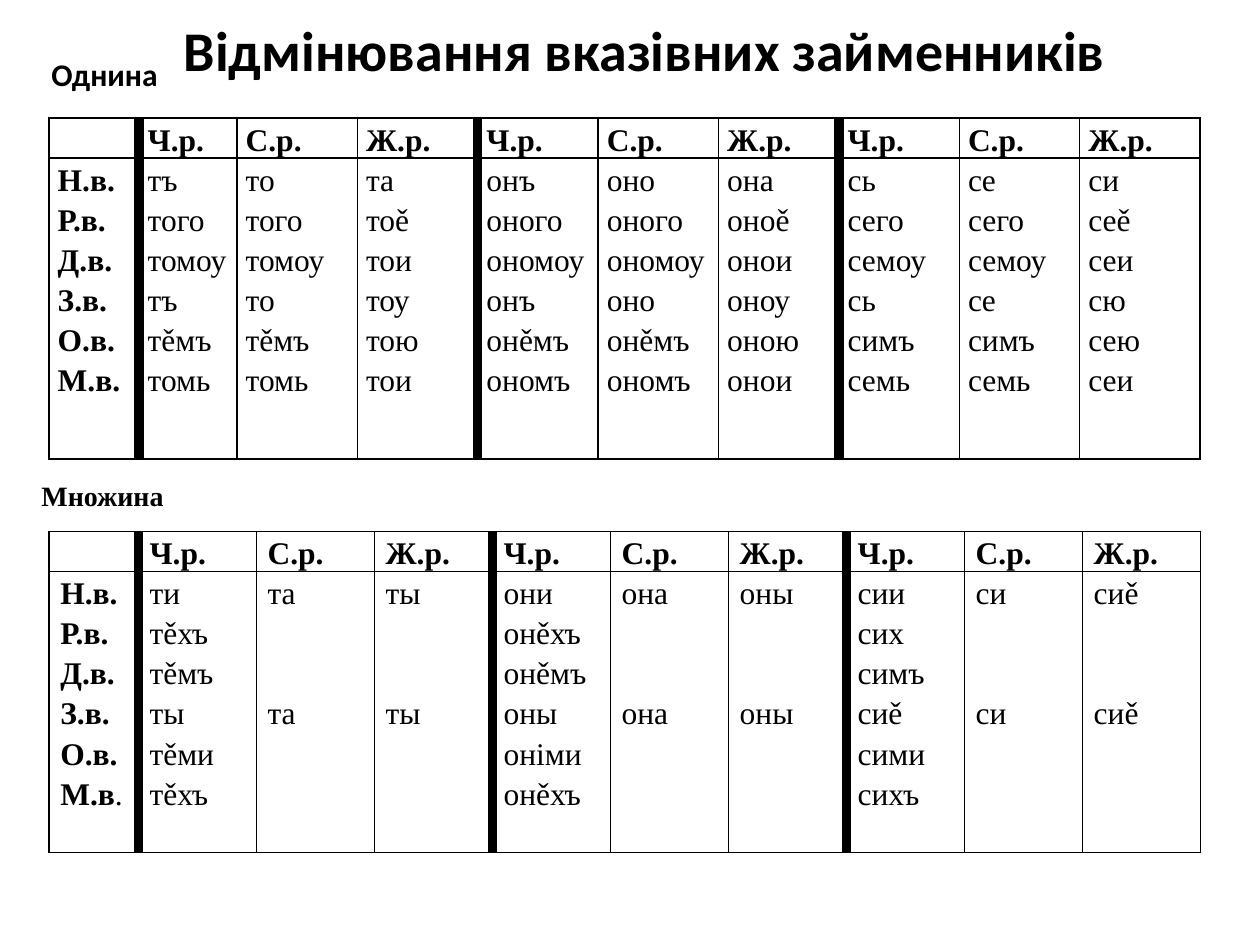
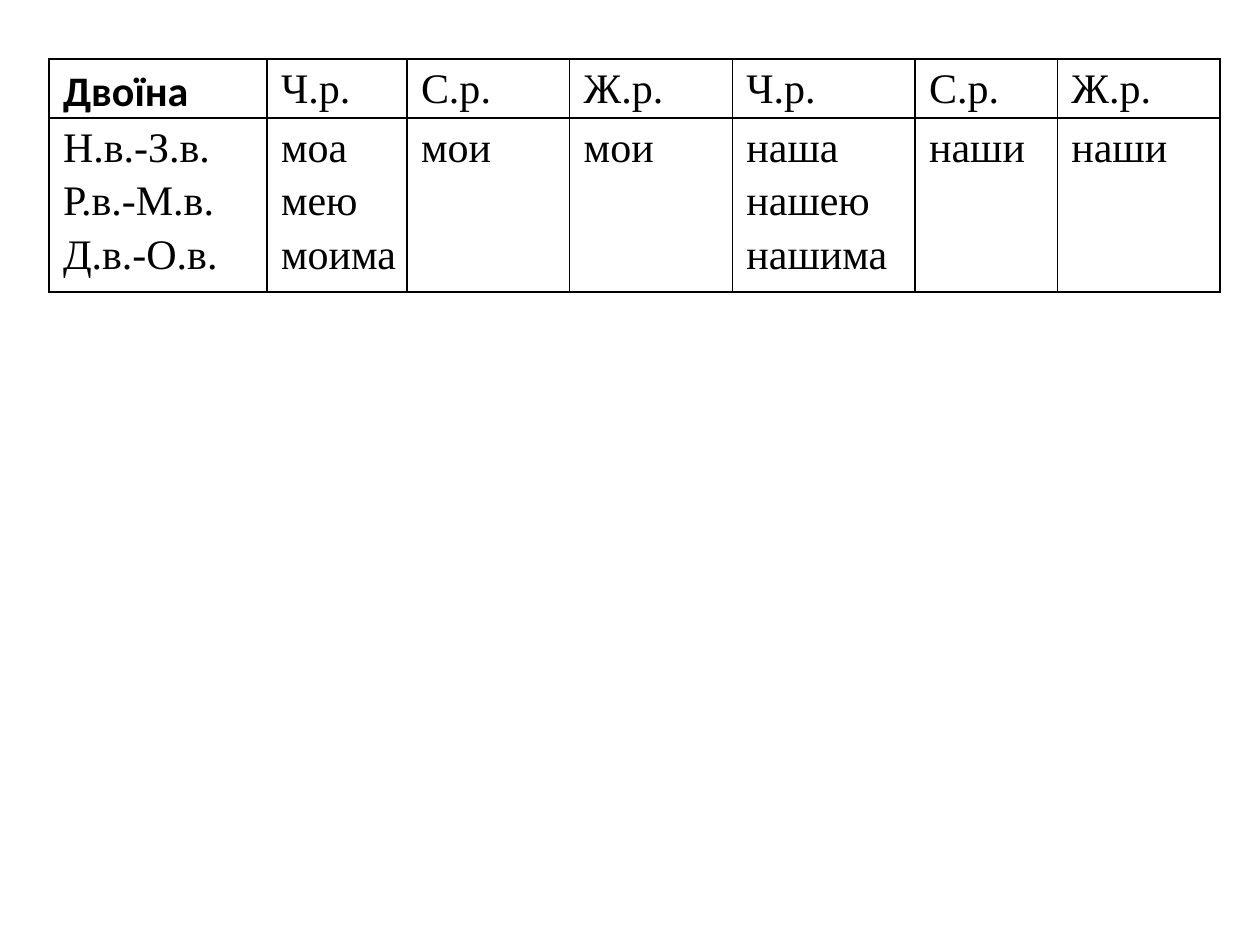
from pptx import Presentation
from pptx.dml.color import RGBColor
from pptx.enum import text as t
from pptx.oxml import parse_xml
from pptx.oxml.ns import nsdecls
from pptx.util import Pt

BLACK = RGBColor(0, 0, 0)
SERIF, SANS = "Times New Roman", "Calibri"
THIN, THICK = 1, 6
SPACING = 1.15
PITCH = 1.27  # height of a text line in a table, per point of type

TITLE = "Відмінювання вказівних займенників"
GENDERS = ["Ч.р.", "С.р.", "Ж.р."]

# One string a column, one word a line; "_" leaves a line free,
# and what follows "|" is not bold.
SINGULAR = [
    "Н.в. Р.в. Д.в. З.в. О.в. М.в.",
    "тъ того томоу тъ тěмъ томь",
    "то того томоу то тěмъ томь",
    "та тоě тои тоу тою тои",
    "онъ оного ономоу онъ онěмъ ономъ",
    "оно оного ономоу оно онěмъ ономъ",
    "она оноě онои оноу оною онои",
    "сь сего семоу сь симъ семь",
    "сe сего семоу сe симъ семь",
    "си сеě сеи сю сею сеи",
]
PLURAL = [
    "Н.в. Р.в. Д.в. З.в. О.в. М.в|.",
    "ти тěхъ тěмъ ты тěми тěхъ",
    "та _ _ та",
    "ты _ _ ты",
    "они онěхъ онěмъ оны оніми онěхъ",
    "она _ _ она",
    "оны _ _ oны",
    "сии сих симъ сиě сими сихъ",
    "си _ _ си",
    "сиě _ _ сиě",
]
DUAL = [
    "Н.в.-З.в. Р.в.-М.в. Д.в.-О.в.",
    "моа мею моима",
    "мои",
    "мои",
    "наша нашею нашима",
    "наши",
    "наши",
]

TABLES = {
    "singular": dict(head=[""] + GENDERS * 3, body=SINGULAR, top=67.5,
                     cols=[51.4, 56] + [68.8] * 8, rows=[22.8, 172],
                     size=18, bold=True, pad=(5, 5), bars=True),
    "plural": dict(head=[""] + GENDERS * 3, body=PLURAL, top=303.6,
                   cols=[51] + [67.45] * 9, rows=[22.8, 160.6],
                   size=18, bold=True, pad=(6.5, 3.6), bars=True),
    "dual": dict(head=["Двоїна"] + GENDERS * 2, body=DUAL, top=33.8,
                 cols=[124.6, 80, 93, 93, 104.4, 81.3, 93], rows=[33.7, 91.4],
                 size=24, bold=False, pad=(8, 5), bars=False),
}
LEFT = 28


def style(font, **form):
    form = dict(name=SERIF, bold=False) | form
    for key, val in form.items():
        setattr(font, key, val)
    font.color.rgb = BLACK


def border(cell, left, right):
    """Draw the four sides; only the left and right widths vary."""
    props = cell._tc.get_or_add_tcPr()
    for side, width in zip("LRTB", (left, right, THIN, THIN)):
        props.append(parse_xml(
            f'<a:ln{side} {nsdecls("a")} w="{Pt(width)}"><a:solidFill>'
            f'<a:srgbClr val="{BLACK}"/></a:solidFill></a:ln{side}>'))


def write(cell, words, size, bold, name=SERIF):
    frame, free, first = cell.text_frame, 0, True
    for word in words.split():
        if word == "_":
            free += 1
            continue
        para = frame.paragraphs[0] if first else frame.add_paragraph()
        para.line_spacing = SPACING
        if free:
            para.space_before = Pt(round(free * PITCH * size, 1))
        main, _, plain = word.partition("|")
        for part, heavy in ((main, bold), (plain, False)):
            if part:
                run = para.add_run()
                run.text = part
                style(run.font, size=Pt(size), bold=heavy, name=name)
        free, first = 0, False


def grid(slide, head, body, top, cols, rows, size, bold, pad, bars):
    table = slide.shapes.add_table(2, len(cols), Pt(LEFT), Pt(top),
                                   Pt(sum(cols)), Pt(sum(rows))).table
    table.first_row = table.horz_banding = False
    for row, high in zip(table.rows, rows):
        row.height = Pt(high)
    for c, wide in enumerate(cols):
        table.columns[c].width = Pt(wide)
        # a thick bar stands before each group of three genders
        left = THICK if bars and c % 3 == 1 else THIN
        right = THICK if bars and c % 3 == 0 and c + 1 < len(cols) else THIN
        for r, words in enumerate((head[c], body[c])):
            cell = table.cell(r, c)
            cell.margin_left, cell.margin_right = Pt(pad[0]), Pt(pad[1])
            cell.margin_top = cell.margin_bottom = 0
            border(cell, left, right)
            cell.fill.background()
            corner = words == "Двоїна"
            write(cell, words, size, corner or bold and 0 in (r, c),
                  SANS if corner else SERIF)


def label(slide, words, box, wrap, anchor, **form):
    frame = slide.shapes.add_textbox(*map(Pt, box)).text_frame
    frame.word_wrap = wrap
    frame.vertical_anchor = anchor
    frame.auto_size = t.MSO_AUTO_SIZE.SHAPE_TO_FIT_TEXT
    run = frame.paragraphs[0].add_run()
    run.text = words
    style(run.font, bold=True, **form)


def head(slide, words):
    title = slide.shapes.title
    title.left, title.top, title.width, title.height = map(Pt, (44.6, 0, 648, 56))
    title.text_frame.text = words
    title.text_frame.vertical_anchor = t.MSO_ANCHOR.MIDDLE
    para = title.text_frame.paragraphs[0]
    para.alignment = t.PP_ALIGN.CENTER
    style(para.runs[0].font, size=Pt(32), bold=True, name=SANS)


def main():
    deck = Presentation()
    deck.slide_width, deck.slide_height = Pt(720), Pt(540)

    slide = deck.slides.add_slide(deck.slide_layouts[5])
    head(slide, TITLE)
    grid(slide, **TABLES["singular"])
    grid(slide, **TABLES["plural"])
    label(slide, "Однина", (22.3, 28, 76.3, 29), False, t.MSO_ANCHOR.TOP,
          size=Pt(18), name=SANS)
    label(slide, "Множина", (16.6, 270, 101.5, 26.6), True, t.MSO_ANCHOR.MIDDLE,
          size=Pt(16))

    slide = deck.slides.add_slide(deck.slide_layouts[6])
    grid(slide, **TABLES["dual"])

    deck.save("out.pptx")


if __name__ == "__main__":
    main()
